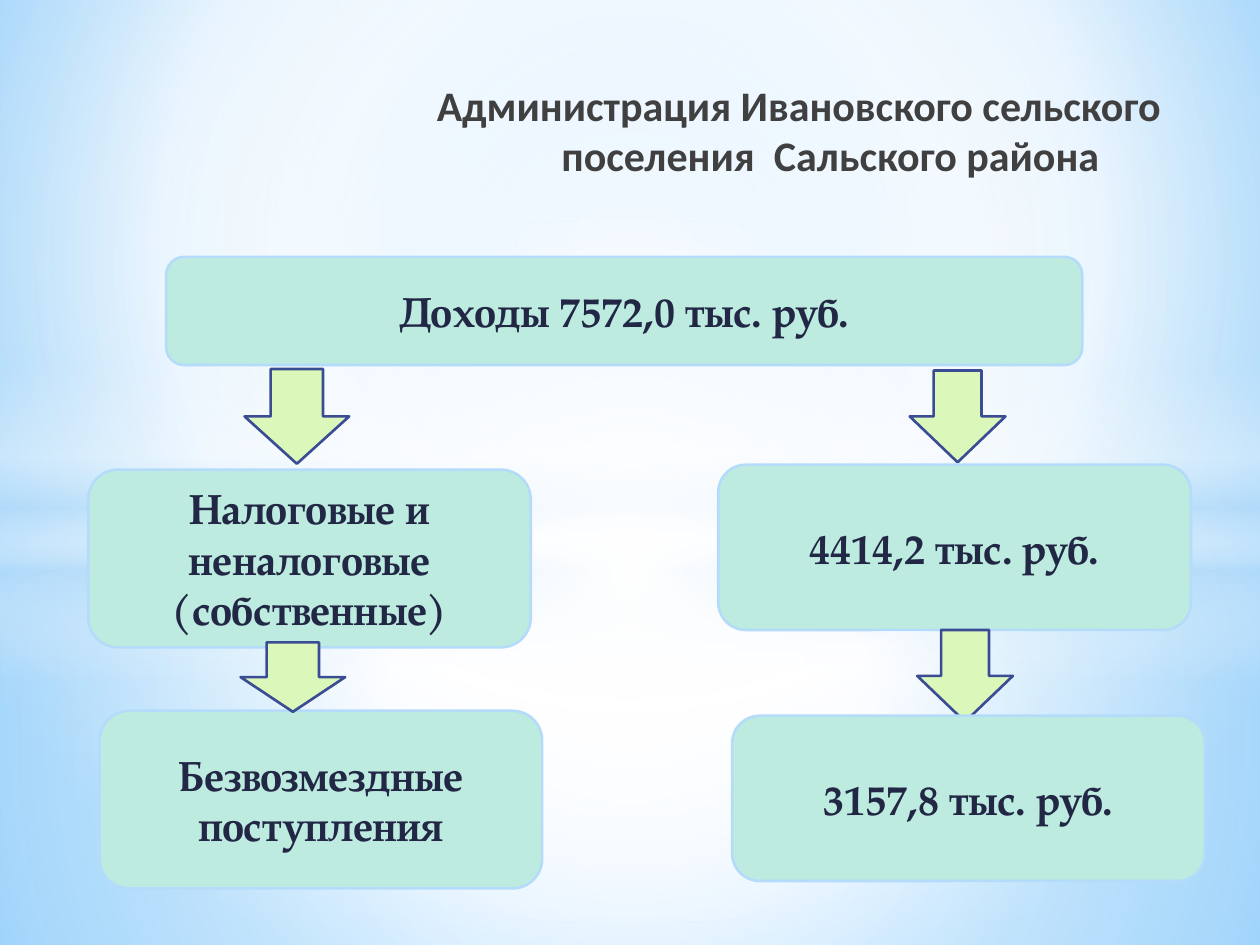
from dataclasses import dataclass

from lxml import etree
from pptx import Presentation
from pptx.dml.color import RGBColor
from pptx.enum.shapes import MSO_SHAPE
from pptx.enum.text import MSO_ANCHOR, MSO_AUTO_SIZE, PP_ALIGN
from pptx.oxml.ns import qn
from pptx.util import Cm, Pt

RECTANGLE = MSO_SHAPE.RECTANGLE
OVAL = MSO_SHAPE.OVAL
ROUNDED = MSO_SHAPE.ROUNDED_RECTANGLE
DOWN_ARROW = MSO_SHAPE.DOWN_ARROW
TOP = MSO_ANCHOR.TOP
MIDDLE = MSO_ANCHOR.MIDDLE
CENTER = PP_ALIGN.CENTER
NO_AUTOFIT = MSO_AUTO_SIZE.NONE
TITLE_ONLY = 5
CENTERED = (50, 50, 50, 50)


@dataclass(frozen=True)
class Theme:
    title_font: str = "Calibri"
    box_font: str = "TeX Gyre Pagella"
    text_size: int = 24
    line_width: float = 1.5
    title_color: str = "404040"
    box_text: str = "212745"
    box_fill: str = "BEEBDF"
    box_line: str = "B4DCFA"
    arrow_fill: str = "DCF7BA"
    arrow_line: str = "3A4C94"
    white: str = "FFFFFF"
    haze: str = "B4DCFA"
    sky: str = "9ED5FF"
    deep_sky: str = "5BB9FF"


def set_gradient(fill, owner, stops, focus=None):
    """Fill owner with (position, colour, opacity) stops in percent.

    With focus (left, top, right, bottom) it is circular, else it runs down.
    """
    fill.solid()
    solid = next(owner.iter(qn("a:solidFill")))
    gradient = etree.Element(qn("a:gradFill"), rotWithShape="1")
    stop_list = etree.SubElement(gradient, qn("a:gsLst"))
    for position, color, opacity in stops:
        stop = etree.SubElement(stop_list, qn("a:gs"), pos=str(position * 1000))
        tint = etree.SubElement(stop, qn("a:srgbClr"), val=color)
        if opacity < 100:
            etree.SubElement(tint, qn("a:alpha"), val=str(opacity * 1000))
    if focus:
        circle = etree.SubElement(gradient, qn("a:path"), path="circle")
        sides = {side: str(part * 1000) for side, part in zip("ltrb", focus)}
        etree.SubElement(circle, qn("a:fillToRect"), **sides)
    else:
        etree.SubElement(gradient, qn("a:lin"), ang="5400000", scaled="0")
    solid.getparent().replace(solid, gradient)


class PageBuilder:
    """Draws elements on one page; every place is (left, top, width, height) in cm."""

    def __init__(self, page, theme):
        self.page = page
        self.theme = theme

    def background(self, stops, focus):
        set_gradient(self.page.background.fill, self.page.element, stops, focus)

    def shape(self, kind, place):
        shape = self.page.shapes.add_shape(kind, *map(Cm, place))
        shape.shadow.inherit = False
        return shape

    def glow(self, kind, place, stops, focus=None):
        shape = self.shape(kind, place)
        shape.line.fill.background()
        set_gradient(shape.fill, shape.element.spPr, stops, focus)

    def paint(self, shape, fill, line):
        shape.fill.solid()
        shape.fill.fore_color.rgb = RGBColor.from_string(fill)
        shape.line.color.rgb = RGBColor.from_string(line)
        shape.line.width = Pt(self.theme.line_width)

    def set_text(self, shape, text, font, color, anchor):
        frame = shape.text_frame
        frame.text = text
        frame.word_wrap = True
        frame.auto_size = NO_AUTOFIT
        frame.vertical_anchor = anchor
        para = frame.paragraphs[0]
        para.alignment = CENTER
        for span in para.runs:
            span.font.name = font
            span.font.size = Pt(self.theme.text_size)
            span.font.bold = True
            span.font.color.rgb = RGBColor.from_string(color)
        return para

    def title(self, text, place, margin, indent):
        title = self.page.shapes.title
        title.left, title.top, title.width, title.height = map(Cm, place)
        para = self.set_text(title, text, self.theme.title_font, self.theme.title_color, TOP)
        properties = para._p.get_or_add_pPr()
        properties.set("marL", str(Cm(margin)))
        properties.set("indent", str(Cm(indent)))
        title.element.getparent().append(title.element)  # above the glows

    def box(self, text, place):
        box = self.shape(ROUNDED, place)
        self.paint(box, self.theme.box_fill, self.theme.box_line)
        self.set_text(box, text, self.theme.box_font, self.theme.box_text, MIDDLE)

    def arrow(self, place):
        self.paint(self.shape(DOWN_ARROW, place), self.theme.arrow_fill, self.theme.arrow_line)


def draw_backdrop(builder):
    white, haze = builder.theme.white, builder.theme.haze
    builder.background(
        [(0, builder.theme.sky, 100), (60, white, 100), (100, builder.theme.deep_sky, 100)],
        (20, 10, 20, 60),
    )
    builder.glow(RECTANGLE, (0, 10.74, 25.4, 8.31),
                 [(0, white, 91), (37, white, 76), (100, haze, 79)], CENTERED)
    builder.glow(RECTANGLE, (0, 0, 25.4, 10.74),
                 [(0, white, 89), (48, white, 62), (100, haze, 79)], CENTERED)
    builder.glow(RECTANGLE, (0, 7.37, 25.4, 6.35),
                 [(0, white, 0), (29, white, 30), (45, haze, 40),
                  (55, white, 26), (65, haze, 60), (100, white, 0)])
    builder.glow(OVAL, (0, 4.45, 25.4, 14.17),
                 [(0, white, 100), (54, white, 0)], CENTERED)


def draw_income(builder):
    left_size, right_size = (8.92, 3.58), (9.53, 3.33)
    right_arrow = (1.93, 1.85)
    builder.box("Доходы 7572,0 тыс. руб.", (3.35, 5.18, 18.47, 2.18))
    builder.arrow((4.93, 7.44, 2.11, 1.91))
    builder.arrow((18.34, 7.47, *right_arrow))
    builder.box("Налоговые и неналоговые (собственные)", (1.78, 9.47, *left_size))
    builder.box("Безвозмездные поступления", (2.01, 14.33, *left_size))
    builder.arrow((4.85, 12.95, 2.11, 1.4))
    builder.box("4414,2 тыс. руб.", (14.48, 9.37, *right_size))
    builder.arrow((18.49, 12.7, *right_arrow))
    builder.box("3157,8 тыс. руб.", (14.76, 14.43, *right_size))


def main():
    deck = Presentation()
    deck.slide_width, deck.slide_height = Cm(25.4), Cm(19.05)
    page = deck.slides.add_slide(deck.slide_layouts[TITLE_ONLY])
    builder = PageBuilder(page, Theme())
    draw_backdrop(builder)
    builder.title("Администрация Ивановского сельского поселения  Сальского района",
                  (6.91, 1.47, 17.88, 2.97), margin=1.78, indent=-1.27)
    draw_income(builder)
    deck.save("out.pptx")


if __name__ == "__main__":
    main()
